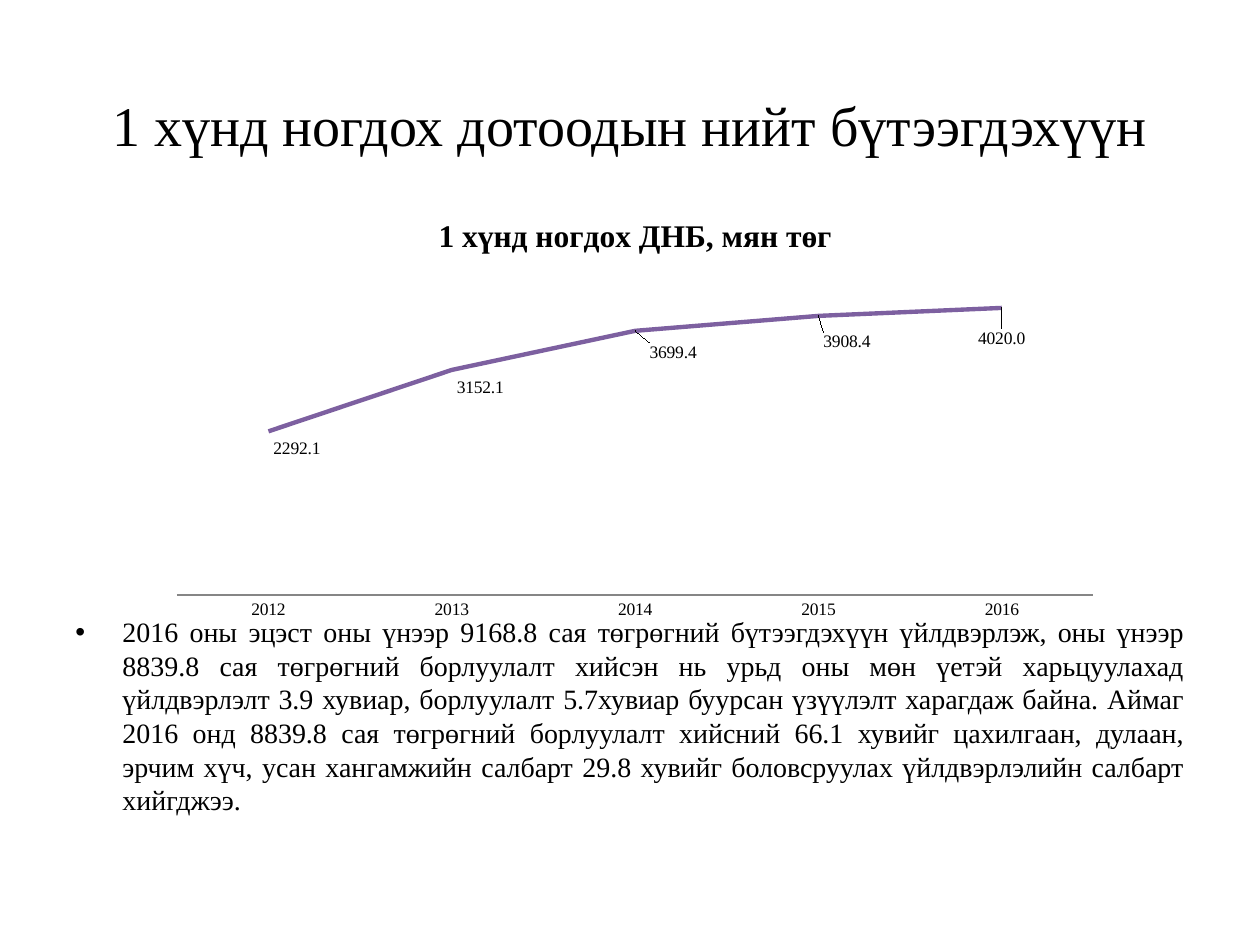
from lxml.etree import SubElement
from pptx import Presentation
from pptx.chart.data import CategoryChartData
from pptx.dml.color import RGBColor
from pptx.enum.chart import (XL_CHART_TYPE as ChartType, XL_LABEL_POSITION as LabelPos,
                             XL_TICK_MARK as Tick)
from pptx.enum.text import MSO_ANCHOR as Anchor, PP_ALIGN as Align
from pptx.oxml import parse_xml
from pptx.oxml.ns import nsdecls, qn
from pptx.util import Cm, Pt

# Content
HEADING = "1 хүнд ногдох дотоодын нийт бүтээгдэхүүн"
CHART_TITLE = "1 хүнд ногдох ДНБ, мян төг"
# year, value, label shift as a share of the chart's width and height
GDP_PER_HEAD = [
    ("2012", 2292.1, (0, 0.04)),
    ("2013", 3152.1, (0, 0.04)),
    ("2014", 3699.4, (0.01, 0.05)),
    ("2015", 3908.4, (0, 0.06)),
    ("2016", 4020.0, (-0.03, 0.07)),
]
SUMMARY = (
    "2016 оны эцэст оны үнээр 9168.8 сая төгрөгний бүтээгдэхүүн үйлдвэрлэж, оны үнээр "
    "8839.8 сая төгрөгний борлуулалт хийсэн нь урьд оны мөн үетэй харьцуулахад "
    "үйлдвэрлэлт 3.9 хувиар, борлуулалт 5.7хувиар буурсан үзүүлэлт харагдаж байна. "
    "Аймаг 2016 онд 8839.8 сая төгрөгний борлуулалт хийсний 66.1 хувийг цахилгаан, "
    "дулаан, эрчим хүч, усан хангамжийн салбарт 29.8 хувийг боловсруулах "
    "үйлдвэрлэлийн салбарт хийгджээ."
)

THEME = {
    "font": "Times New Roman",
    "text": RGBColor(0, 0, 0),
    "line": RGBColor(0x7D, 0x60, 0xA0),
    "axis": RGBColor(0x86, 0x86, 0x86),
    "heading": Pt(32), "summary": Pt(16), "chart_title": Pt(18), "chart": Pt(10),
}


def style(font, role, bold=False):
    font.name, font.size, font.bold = THEME["font"], THEME[role], bold
    font.color.rgb = THEME["text"]


def add_text(slide, box, text, role, align, anchor):
    frame = slide.shapes.add_textbox(*map(Cm, box)).text_frame
    frame.word_wrap = True
    frame.vertical_anchor = anchor
    frame.text = text
    paragraph = frame.paragraphs[0]
    paragraph.alignment = align
    style(paragraph.runs[0].font, role)
    return paragraph


def set_layout(layout, **places):
    """Fill a c:layout element with a manual layout."""
    manual = SubElement(layout, qn("c:manualLayout"))
    for tag, value in places.items():
        SubElement(manual, qn(f"c:{tag}")).set("val", str(value))


def new_layout():
    return parse_xml(f"<c:layout {nsdecls('c')}/>")


def add_gdp_chart(slide, box):
    years, values, shifts = zip(*GDP_PER_HEAD)
    gdp = CategoryChartData(number_format="0.0")
    gdp.categories = years
    gdp.add_series(CHART_TITLE, values)
    chart = slide.shapes.add_chart(ChartType.LINE_STACKED, *map(Cm, box), gdp).chart
    style(chart.font, "chart")
    chart.has_legend = False
    chart.has_title = True
    chart.chart_title.text_frame.text = CHART_TITLE
    style(chart.chart_title.text_frame.paragraphs[0].runs[0].font, "chart_title", True)

    # Axes: only the year axis shows
    chart.value_axis.visible = False
    chart.value_axis.has_major_gridlines = False
    chart.value_axis.minimum_scale, chart.value_axis.maximum_scale = 0, 4500
    year_axis = chart.category_axis
    year_axis.major_tick_mark = year_axis.minor_tick_mark = Tick.NONE
    year_axis.format.line.color.rgb = THEME["axis"]
    year_axis.format.line.width = Pt(0.75)

    # Plot area
    plot_area = chart.plots[0]._element.getparent()
    for old in plot_area.findall(qn("c:layout")):
        plot_area.remove(old)
    plot_layout = new_layout()
    plot_area.insert(0, plot_layout)
    set_layout(plot_layout, layoutTarget="inner", xMode="edge", yMode="edge",
               x=0.02, y=0.18, w=0.96, h=0.74)

    # Line and its shifted value labels
    chart.plots[0].vary_by_categories = False
    series = chart.plots[0].series[0]
    series.smooth = False
    series.format.line.color.rgb = THEME["line"]
    series.format.line.width = Pt(2.5)
    series.data_labels.show_value = True
    series.data_labels.number_format = "0.0"
    series.data_labels.number_format_is_linked = False
    style(series.data_labels.font, "chart")
    for index, (across, down) in enumerate(shifts):
        label = series.points[index].data_label
        style(label.font, "chart")
        label.position = LabelPos.RIGHT
        mark = series.data_labels._element.findall(qn("c:dLbl"))[index]
        label_layout = new_layout()
        mark.insert(1, label_layout)
        set_layout(label_layout, x=across, y=down)


def main():
    deck = Presentation()
    deck.slide_width, deck.slide_height = Cm(25.4), Cm(19.05)
    slide = deck.slides.add_slide(deck.slide_layouts[6])

    # Summary bullet
    summary = add_text(slide, (1.27, 12.27, 22.86, 4.75), SUMMARY, "summary",
                       Align.JUSTIFY, Anchor.TOP)
    indent = Cm(0.95)
    properties = summary._p.get_or_add_pPr()
    properties.set("marL", str(indent))
    properties.set("indent", str(-indent))
    SubElement(properties, qn("a:buFont")).set("typeface", "Arial")
    SubElement(properties, qn("a:buChar")).set("char", "•")

    # Heading
    add_text(slide, (1.27, 0.76, 22.86, 3.48), HEADING, "heading",
             Align.CENTER, Anchor.MIDDLE)

    # Chart
    add_gdp_chart(slide, (3.18, 3.94, 19.25, 8.76))
    deck.save("out.pptx")


if __name__ == "__main__":
    main()
